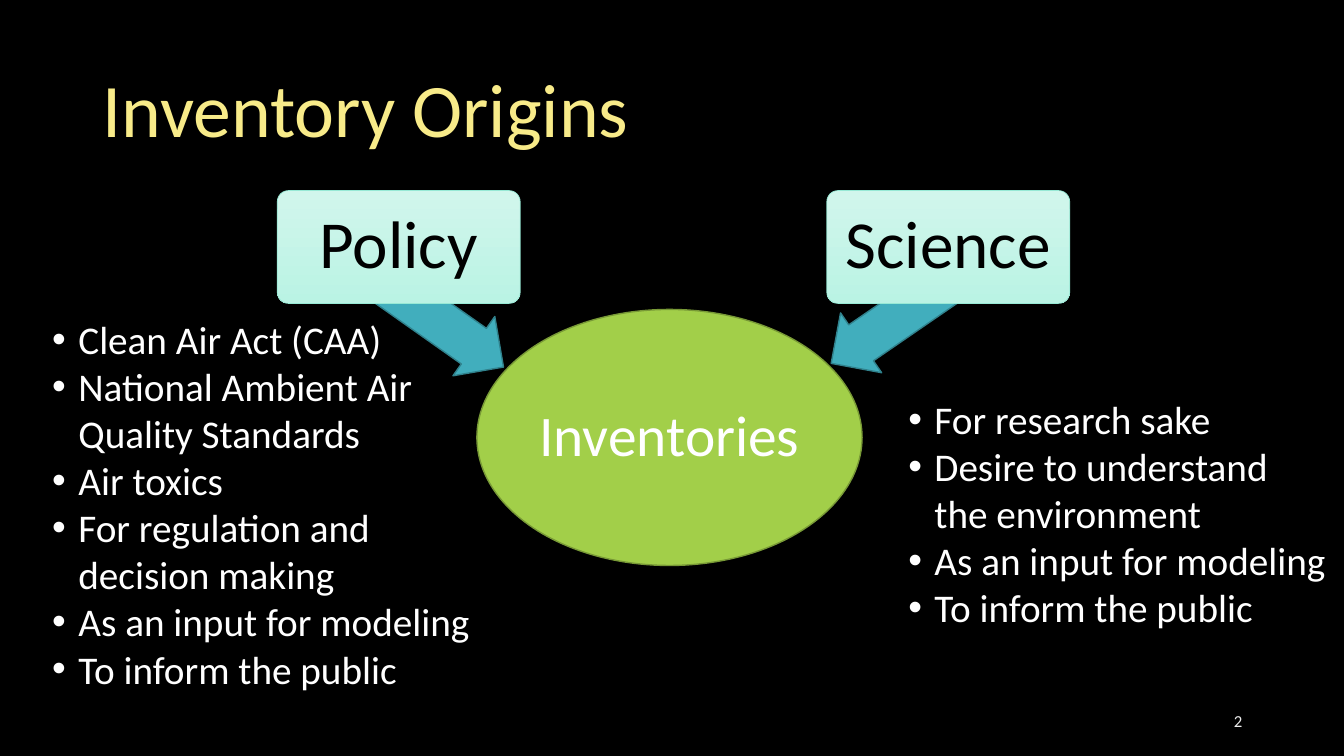
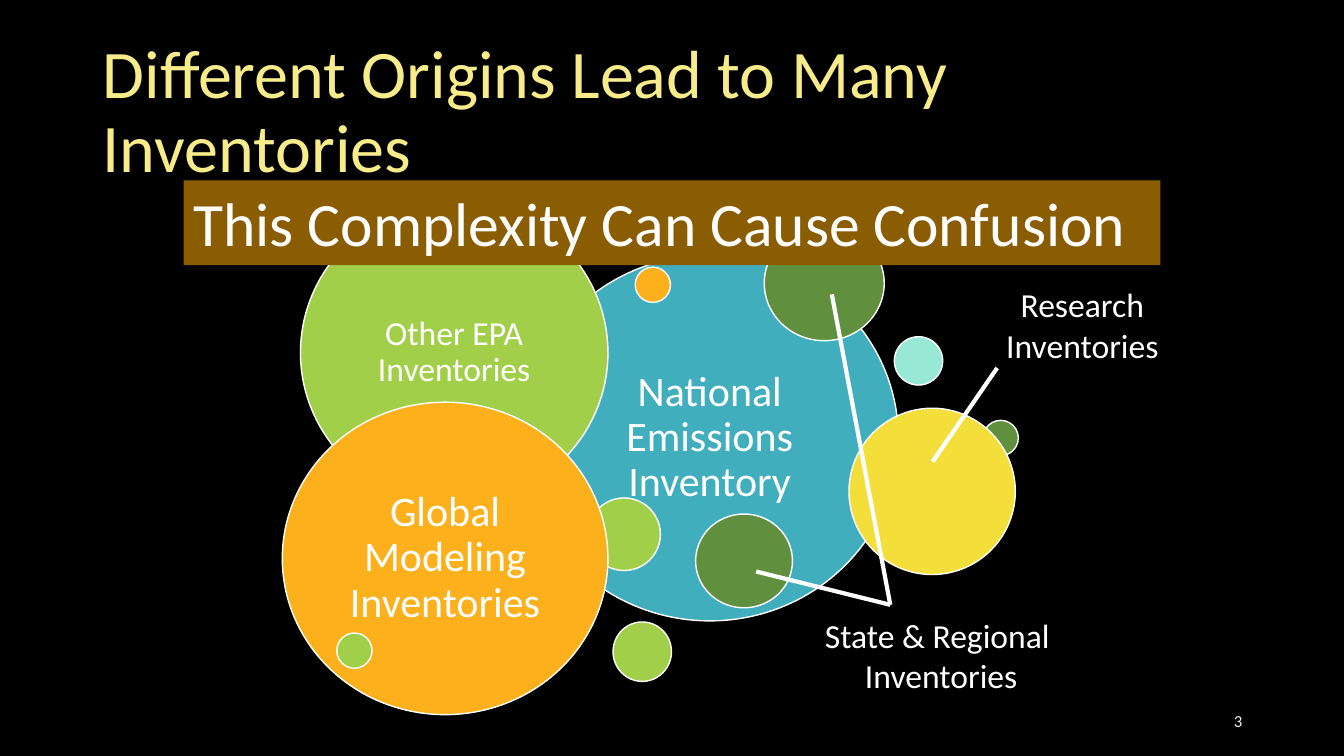
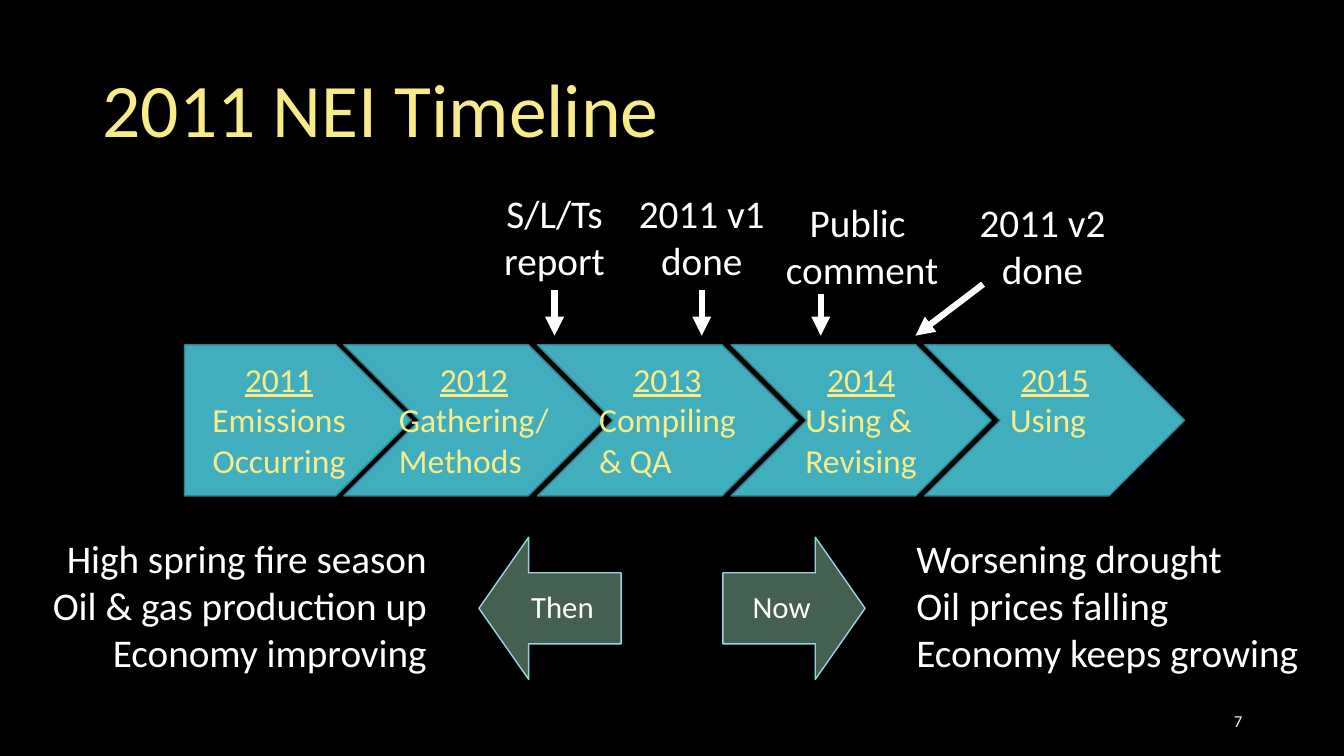
from dataclasses import dataclass, field
from typing import Optional

import pptx
import pptx.dml.color
import pptx.enum.shapes
import pptx.enum.text
import pptx.oxml
import pptx.oxml.ns
import pptx.util
from pptx.util import Inches

RGBColor = pptx.dml.color.RGBColor
Shape = pptx.enum.shapes.MSO_SHAPE
Align = pptx.enum.text.PP_ALIGN
Anchor = pptx.enum.text.MSO_ANCHOR

# Shared look
FONT = "Calibri"
BLACK = RGBColor(0x00, 0x00, 0x00)
WHITE = RGBColor(0xFF, 0xFF, 0xFF)
PALE_GREY = RGBColor(0xED, 0xED, 0xED)
TITLE_YELLOW = RGBColor(0xF8, 0xEB, 0x89)
YELLOW = RGBColor(0xF4, 0xDE, 0x3A)
LIME = RGBColor(0xA2, 0xCF, 0x49)
LIME_EDGE = RGBColor(0x78, 0x99, 0x36)
TEAL = RGBColor(0x41, 0xAE, 0xBD)
TEAL_EDGE = RGBColor(0x30, 0x81, 0x8C)
LEAF = RGBColor(0x60, 0x8F, 0x3D)
ORANGE = RGBColor(0xFC, 0xB1, 0x1C)
MINT = RGBColor(0x97, 0xE9, 0xD5)
MINT_TOP = RGBColor(0xD1, 0xF6, 0xEC)
MINT_BOTTOM = RGBColor(0xBA, 0xF3, 0xE4)
BROWN = RGBColor(0x8A, 0x5D, 0x02)
PINE = RGBColor(0x45, 0x5F, 0x51)
SKY = RGBColor(0x94, 0xD7, 0xE4)


@dataclass
class Box:
    left: float
    top: float
    width: float
    height: float

    def lengths(self) -> tuple:
        return tuple(map(Inches, (self.left, self.top, self.width, self.height)))


@dataclass
class TextStyle:
    size: float
    color: RGBColor = WHITE
    align: Align = Align.LEFT
    anchor: Anchor = Anchor.TOP
    spacing: float = 1.0
    wrap: bool = True
    margins: tuple = (0.1, 0.05, 0.1, 0.05)
    bullet: bool = False


@dataclass
class Figure:
    kind: Shape
    box: Box
    fill: RGBColor
    edge: Optional[RGBColor] = None
    edge_width: float = 1
    rotation: float = 0
    adjustments: tuple = ()
    paragraphs: list = field(default_factory=list)
    style: Optional[TextStyle] = None


def centred(size: float, inset: float = 0.05, color: RGBColor = WHITE) -> TextStyle:
    return TextStyle(size, color, Align.CENTER, Anchor.MIDDLE, 0.9, margins=(inset,) * 4)


def set_values(target, values: dict) -> None:
    for name, value in values.items():
        setattr(target, name, value)


def add_bullet(paragraph) -> None:
    properties = paragraph._p.get_or_add_pPr()
    properties.set("marL", str(Inches(0.26)))
    properties.set("indent", str(Inches(-0.26)))
    namespace = pptx.oxml.ns.nsdecls("a")
    properties.append(pptx.oxml.parse_xml(f'<a:buFont {namespace} typeface="Arial"/>'))
    properties.append(pptx.oxml.parse_xml(f'<a:buChar {namespace} char="•"/>'))


def write_text(shape, paragraphs: list, style: TextStyle) -> None:
    frame = shape.text_frame
    left, top, right, bottom = map(Inches, style.margins)
    set_values(frame, {"word_wrap": style.wrap, "vertical_anchor": style.anchor,
                       "margin_left": left, "margin_top": top,
                       "margin_right": right, "margin_bottom": bottom})
    for index, text in enumerate(paragraphs):
        paragraph = frame.add_paragraph() if index else frame.paragraphs[0]
        paragraph.text = text
        set_values(paragraph, {"alignment": style.align, "line_spacing": style.spacing})
        if style.bullet:
            add_bullet(paragraph)
        for run in paragraph.runs:
            set_values(run.font, {"name": FONT, "size": pptx.util.Pt(style.size)})
            run.font.color.rgb = style.color


def add_text(slide, box: Box, paragraphs: list, style: TextStyle) -> None:
    write_text(slide.shapes.add_textbox(*box.lengths()), paragraphs, style)


def add_figure(slide, figure: Figure):
    shape = slide.shapes.add_shape(figure.kind, *figure.box.lengths())
    shape.shadow.inherit = False
    shape.rotation = figure.rotation
    for index, value in enumerate(figure.adjustments):
        shape.adjustments[index] = value
    shape.fill.solid()
    shape.fill.fore_color.rgb = figure.fill
    if figure.edge is None:
        shape.line.fill.background()
    else:
        shape.line.color.rgb = figure.edge
        shape.line.width = pptx.util.Pt(figure.edge_width)
    if figure.style:
        write_text(shape, figure.paragraphs, figure.style)
    return shape


def add_line(slide, start: tuple, end: tuple, width: float, arrow: bool = False) -> None:
    connector = slide.shapes.add_connector(
        pptx.enum.shapes.MSO_CONNECTOR.STRAIGHT, *map(Inches, start + end))
    connector.line.color.rgb = WHITE
    connector.line.width = pptx.util.Pt(width)
    namespace = pptx.oxml.ns.nsdecls("a")
    if arrow:
        connector.line._get_or_add_ln().append(
            pptx.oxml.parse_xml(f'<a:tailEnd {namespace} type="triangle"/>'))
    connector._element.spPr.append(pptx.oxml.parse_xml(f"<a:effectLst {namespace}/>"))


def new_slide(presentation, title: str, number: str, title_size: float = 54):
    slide = presentation.slides.add_slide(presentation.slide_layouts[6])
    slide.background.fill.solid()
    slide.background.fill.fore_color.rgb = BLACK
    add_text(slide, Box(0.92, 0.4, 11.5, 1.45), [title],
             TextStyle(title_size, TITLE_YELLOW, anchor=Anchor.MIDDLE, spacing=0.9))
    add_text(slide, Box(9.42, 6.95, 3, 0.4), [number],
             TextStyle(12, PALE_GREY, Align.RIGHT, Anchor.MIDDLE))
    return slide


def build_origins(presentation) -> None:
    slide = new_slide(presentation, "Inventory Origins", "2")
    add_figure(slide, Figure(Shape.OVAL, Box(4.73, 3.07, 3.82, 2.54), LIME, LIME_EDGE,
                             paragraphs=["Inventories"], style=centred(41, 0.03)))

    # Sources and the arrows behind them
    sources = [("Policy", 2.75, Box(3.54, 2.82, 1.6, 0.72), 215.2),
               ("Science", 8.2, Box(8.1, 2.78, 1.64, 0.72), 325.5)]
    for name, left, arrow_box, rotation in sources:
        add_figure(slide, Figure(Shape.LEFT_ARROW, arrow_box, TEAL, TEAL_EDGE,
                                 rotation=rotation, adjustments=(0.6, 0.5)))
        source = add_figure(slide, Figure(
            Shape.ROUNDED_RECTANGLE, Box(left, 1.89, 2.41, 1.12), MINT_TOP, MINT, 0.5,
            adjustments=(0.1,), paragraphs=[name], style=centred(48, 0.1, BLACK)))
        source.fill.gradient()
        source.fill.gradient_angle = 270
        for stop, color in zip(source.fill.gradient_stops, (MINT_TOP, MINT_BOTTOM)):
            stop.color.rgb = color

    # Reasons under each source
    reasons = TextStyle(28, bullet=True)
    shared = ["As an input for modeling", "To inform the public"]
    add_text(slide, Box(0.42, 3.08, 4.43, 3.87),
             ["Clean Air Act (CAA)", "National Ambient Air\nQuality Standards",
              "Air toxics", "For regulation and\ndecision making"] + shared, reasons)
    add_text(slide, Box(8.91, 3.87, 4.42, 2.46),
             ["For research sake", "Desire to understand\nthe environment"] + shared, reasons)


def build_many_inventories(presentation) -> None:
    slide = new_slide(presentation, "Different Origins Lead to Many Inventories", "3", 48.6)

    # Bubbles, from back to front
    bubbles = [
        (Box(5.17, 2.53, 3.74, 3.63), TEAL, "National\nEmissions\nInventory", 30),
        (Box(6.08, 6.17, 0.58, 0.59), LIME, "", 0),
        (Box(9.75, 4.17, 0.35, 0.35), LEAF, "", 0),
        (Box(8.42, 4.05, 1.65, 1.65), YELLOW, "", 0),
        (Box(6.3, 2.65, 0.35, 0.35), ORANGE, "", 0),
        (Box(5.83, 4.94, 0.72, 0.72), LIME, "", 0),
        (Box(2.98, 2, 3.05, 3), LIME, "Other EPA\nInventories", 24),
        (Box(7.58, 2.24, 1.19, 1.14), LEAF, "", 0),
        (Box(2.8, 3.99, 3.23, 3.1), ORANGE, "Global\nModeling\nInventories", 30),
        (Box(8.87, 3.34, 0.48, 0.48), MINT, "", 0),
        (Box(3.34, 6.28, 0.35, 0.35), LIME, "", 0),
        (Box(6.9, 5.1, 0.96, 0.93), LEAF, "", 0),
    ]
    for box, fill, label, size in bubbles:
        add_figure(slide, Figure(Shape.OVAL, box, fill, WHITE, paragraphs=[label],
                                 style=centred(size) if label else None))

    # Callouts
    callout = TextStyle(24, align=Align.CENTER, anchor=Anchor.MIDDLE)
    add_text(slide, Box(8, 6, 2.67, 1), ["State & Regional \nInventories"], callout)
    add_text(slide, Box(9.86, 2.72, 1.75, 1), ["Research\nInventories"], callout)
    for start, end in [((8.83, 6), (7.5, 5.67)), ((8.83, 6), (8.25, 2.92)),
                       ((9.89, 3.65), (9.25, 4.58))]:
        add_line(slide, start, end, 3)

    # Banner
    add_figure(slide, Figure(Shape.RECTANGLE, Box(1.82, 1.79, 9.69, 0.84), BROWN,
                             paragraphs=["This Complexity Can Cause Confusion"],
                             style=TextStyle(44)))


def build_timeline(presentation) -> None:
    slide = new_slide(presentation, "2011 NEI Timeline", "7")

    # Years
    years = [("2011", "Emissions\nOccurring"), ("2012", "Gathering/\nMethods"),
             ("2013", "Compiling\n& QA"), ("2014", "Using &\nRevising"), ("2015", "Using")]
    for index, (year, work) in enumerate(years):
        first = index == 0
        box = Box(1.83 if first else 1.49 + 1.92 * index, 3.42, 2.25 if first else 2.58, 1.5)
        step = add_figure(slide, Figure(
            Shape.PENTAGON if first else Shape.CHEVRON, box, TEAL, TEAL_EDGE,
            paragraphs=[year, work],
            style=TextStyle(24, TITLE_YELLOW, Align.CENTER if first else Align.LEFT,
                            wrap=first, margins=(0.1, 0.14, 0.1, 0.05))))
        heading = step.text_frame.paragraphs[0]
        heading.alignment = Align.CENTER
        heading.runs[0].font.underline = True

    # Milestones
    milestones = [
        ("S/L/Ts\nreport", Box(4.75, 1.83, 1.5, 1.04), (5.5, 2.88), (5.5, 3.33)),
        ("2011 v1\ndone", Box(6.21, 1.83, 1.5, 1.04), (6.96, 2.88), (6.96, 3.33)),
        ("Public \ncomment", Box(7.3, 1.92, 2.5, 1.04), (8.14, 2.92), (8.14, 3.33)),
        ("2011 v2\ndone", Box(9.59, 1.92, 1.5, 1.04), (9.75, 2.82), (9.08, 3.33)),
    ]
    for label, box, start, end in milestones:
        add_text(slide, box, [label], TextStyle(28, align=Align.CENTER))
        add_line(slide, start, end, 4.5, arrow=True)

    # Conditions then and now
    conditions = [
        ("Then", Shape.LEFT_ARROW, 4.75, 0, Align.RIGHT,
         ["High spring fire season", "Oil & gas production up", "Economy improving"]),
        ("Now", Shape.RIGHT_ARROW, 7.17, 8.99, Align.LEFT,
         ["Worsening drought", "Oil prices falling", "Economy keeps growing"]),
    ]
    for name, kind, arrow_left, text_left, align, facts in conditions:
        add_figure(slide, Figure(kind, Box(arrow_left, 5.33, 1.41, 1.41), PINE, SKY,
                                 adjustments=(0.5, 0.35), paragraphs=[name],
                                 style=centred(22, 0.17)))
        add_text(slide, Box(text_left, 5.25, 4.33, 1.51), facts, TextStyle(28, align=align))


def main() -> None:
    presentation = pptx.Presentation()
    set_values(presentation, {"slide_width": Inches(13.33), "slide_height": Inches(7.5)})
    build_origins(presentation)
    build_many_inventories(presentation)
    build_timeline(presentation)
    presentation.save("out.pptx")


if __name__ == "__main__":
    main()
